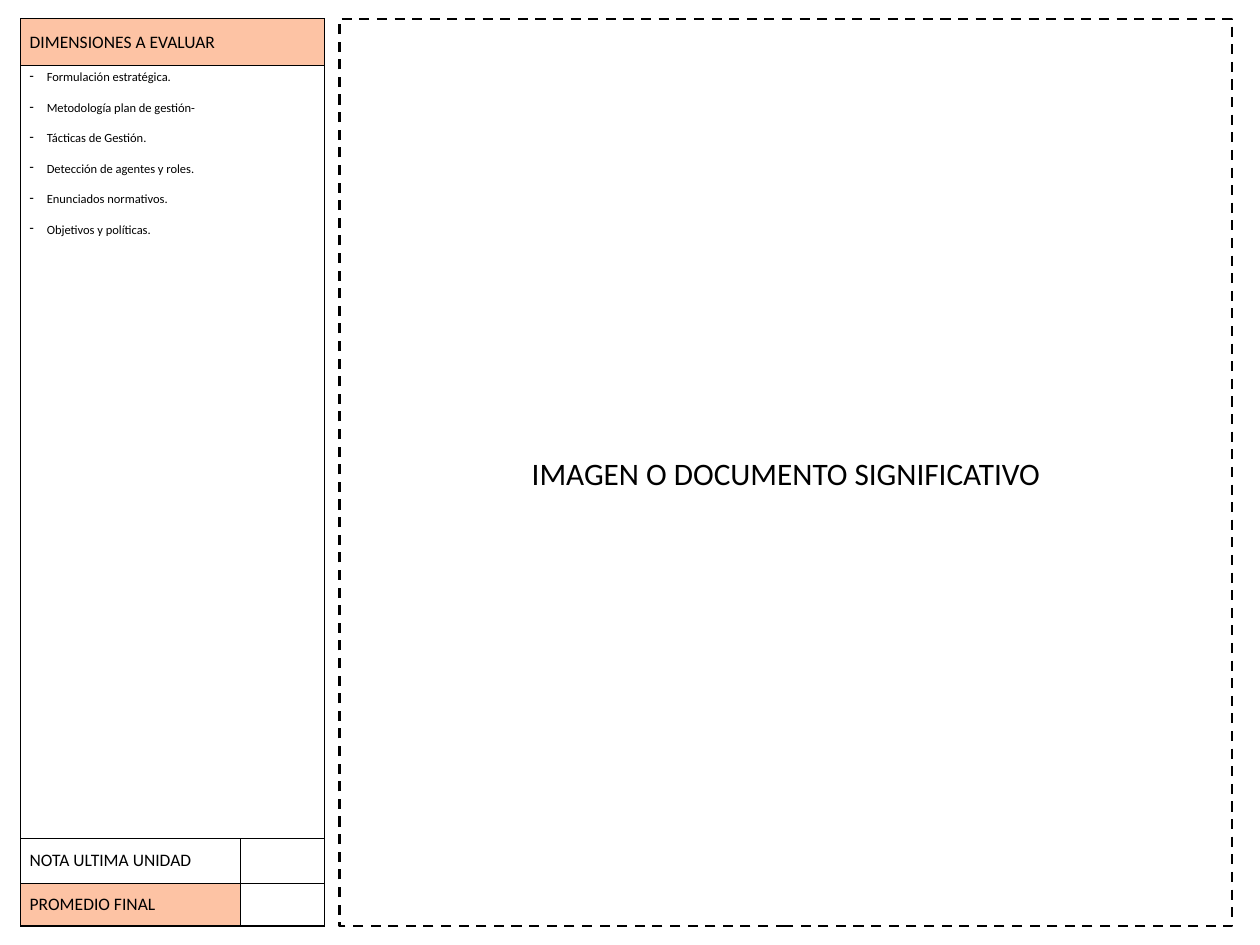
from dataclasses import dataclass

from lxml.etree import SubElement
from pptx import Presentation
from pptx.dml.color import RGBColor
from pptx.enum.dml import MSO_LINE
from pptx.enum.shapes import MSO_SHAPE
from pptx.enum.text import MSO_ANCHOR, PP_ALIGN
from pptx.oxml.ns import qn
from pptx.slide import Slide
from pptx.table import Table, _Cell
from pptx.text.text import _Paragraph
from pptx.util import Inches, Pt

WIDTH, HEIGHT = 14, 10.5
TOP, PANEL_HEIGHT = 0.02 * HEIGHT, 0.96 * HEIGHT
TABLE_LEFT, FRAME_LEFT, FRAME_WIDTH = 0.23, 3.77, 9.92
COLUMNS = (2.44, 0.94)
ROWS = (0.52, 8.59, 0.49, 0.48)
FONT = "Calibri"
COLORS = {"ink": "000000", "peach": "FDC3A4", "paper": "FFFFFF"}
THIN, MEDIUM = 0.5, 1
DIMENSIONS = (
    "Formulación estratégica.",
    "Metodología plan de gestión-",
    "Tácticas de Gestión.",
    "Detección de agentes y roles.",
    "Enunciados normativos.",
    "Objetivos y políticas.",
)


@dataclass(frozen=True)
class Label:
    row: int
    text: str
    fill: str
    merged: bool = False


LABELS = (
    Label(0, "DIMENSIONES A EVALUAR", "peach", merged=True),
    Label(2, "NOTA ULTIMA UNIDAD", "paper"),
    Label(3, "PROMEDIO FINAL", "peach"),
)


def color(name: str) -> RGBColor:
    return RGBColor.from_string(COLORS[name])


def write(paragraph: _Paragraph, text: str, size: float) -> None:
    paragraph.text = text
    paragraph.font.size = Pt(size)
    paragraph.font.name = FONT
    paragraph.font.color.rgb = color("ink")


def set_borders(cell: _Cell, left: float, right: float, top: float, bottom: float) -> None:
    properties = cell._tc.get_or_add_tcPr()
    edges = {"a:lnL": left, "a:lnR": right, "a:lnT": top, "a:lnB": bottom}
    for index, (tag, width) in enumerate(edges.items()):
        line = SubElement(properties, qn(tag), w=str(Pt(width)))
        fill = SubElement(line, qn("a:solidFill"))
        SubElement(fill, qn("a:srgbClr"), val=COLORS["ink"])
        properties.insert(index, line)


def add_frame(slide: Slide) -> None:
    frame = slide.shapes.add_shape(
        MSO_SHAPE.RECTANGLE, Inches(FRAME_LEFT), Inches(TOP),
        Inches(FRAME_WIDTH), Inches(PANEL_HEIGHT),
    )
    frame.shadow.inherit = False
    frame.fill.background()
    frame.line.color.rgb = color("ink")
    frame.line.width = Pt(2)
    frame.line.dash_style = MSO_LINE.DASH
    frame.text_frame.vertical_anchor = MSO_ANCHOR.MIDDLE
    paragraph = frame.text_frame.paragraphs[0]
    write(paragraph, "IMAGEN O DOCUMENTO SIGNIFICATIVO", 25)
    paragraph.alignment = PP_ALIGN.CENTER


def fill_list(cell: _Cell) -> None:
    cell.text_frame.text = "\n".join(DIMENSIONS)
    for paragraph, text in zip(cell.text_frame.paragraphs, DIMENSIONS):
        write(paragraph, text, 10)
        paragraph.space_after = Pt(12.2)
        properties = paragraph._p.get_or_add_pPr()
        properties.set("marL", str(Inches(0.19)))
        properties.set("indent", str(-Inches(0.19)))
        SubElement(properties, qn("a:buFontTx"))
        SubElement(properties, qn("a:buChar"), char="-")


def format_cells(table: Table) -> None:
    last_row, last_column = len(ROWS) - 1, len(COLUMNS) - 1
    for row in range(len(ROWS)):
        inner = MEDIUM if row < 2 else THIN
        for column in range(len(COLUMNS)):
            cell = table.cell(row, column)
            cell.fill.background()
            set_borders(
                cell,
                left=MEDIUM if column == 0 else inner,
                right=MEDIUM if column == last_column else inner,
                top=THIN if row == last_row else MEDIUM,
                bottom=THIN if row == last_row - 1 else MEDIUM,
            )


def add_evaluation_table(slide: Slide) -> None:
    table = slide.shapes.add_table(
        len(ROWS), len(COLUMNS), Inches(TABLE_LEFT), Inches(TOP),
        Inches(sum(COLUMNS)), Inches(sum(ROWS)),
    ).table
    table.first_row = table.horz_banding = False
    for column, width in zip(table.columns, COLUMNS):
        column.width = Inches(width)
    for row, height in zip(table.rows, ROWS):
        row.height = Inches(height)
    format_cells(table)
    for label in LABELS:
        cell = table.cell(label.row, 0)
        if label.merged:
            cell.merge(table.cell(label.row, 1))
        cell.fill.solid()
        cell.fill.fore_color.rgb = color(label.fill)
        cell.vertical_anchor = MSO_ANCHOR.MIDDLE
        write(cell.text_frame.paragraphs[0], label.text, 14)
    list_cell = table.cell(1, 0)
    list_cell.merge(table.cell(1, 1))
    fill_list(list_cell)


def main() -> None:
    presentation = Presentation()
    presentation.slide_width = Inches(WIDTH)
    presentation.slide_height = Inches(HEIGHT)
    slide = presentation.slides.add_slide(presentation.slide_layouts[6])
    add_frame(slide)
    add_evaluation_table(slide)
    presentation.save("out.pptx")


if __name__ == "__main__":
    main()
